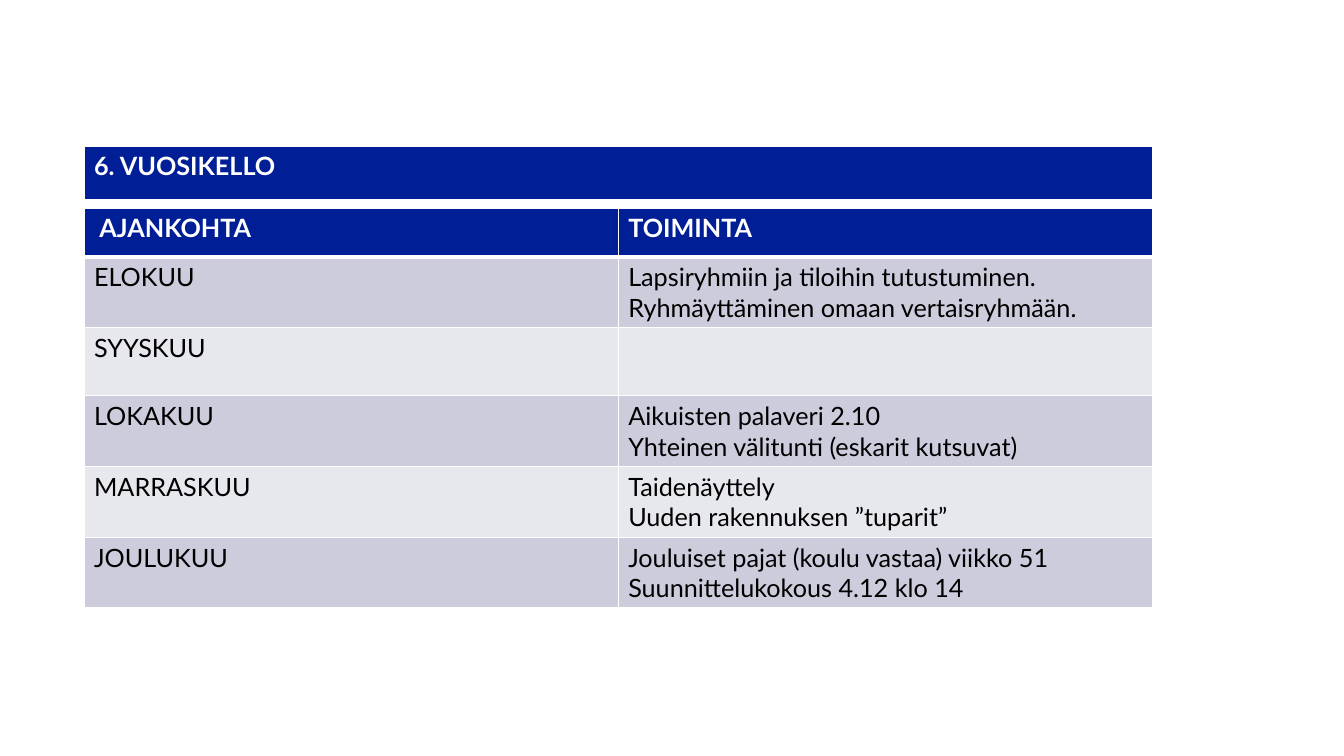
from lxml import etree
from pptx import Presentation
from pptx.dml.color import RGBColor
from pptx.oxml.ns import qn
from pptx.util import Inches, Pt

WIDTH, HEIGHT = 13.33, 7.5
NAVY, WHITE, BLACK = "001E96", "FFFFFF", "000000"
BANDS = ("CCCCDC", "E7E7EE")
THIN, THICK = 0.96, 3
LEFT, TABLE_WIDTH = 0.0625, 0.795
HEADINGS = [" AJANKOHTA", "TOIMINTA"]
MONTHS = [
    ("ELOKUU", "Lapsiryhmiin ja tiloihin tutustuminen.\nRyhmäyttäminen omaan vertaisryhmään."),
    ("SYYSKUU", ""),
    ("LOKAKUU", "Aikuisten palaveri 2.10\nYhteinen välitunti (eskarit kutsuvat)"),
    ("MARRASKUU", "Taidenäyttely\nUuden rakennuksen ”tuparit”"),
    ("JOULUKUU", "Jouluiset pajat (koulu vastaa) viikko 51\nSuunnittelukokous 4.12 klo 14"),
]


def color(value):
    """Turn a hex string into a colour."""
    return RGBColor.from_string(value)


class CalendarSlide:
    """Draw tables in one style, placed by shares of the slide's size."""

    font = "Lato"
    size = 18

    def __init__(self, deck):
        """Add an empty slide to the deck."""
        self.slide = deck.slides.add_slide(deck.slide_layouts[6])

    def border(self, cell, widths):
        """Draw white edges in the order left, right, top, bottom."""
        properties = cell._tc.get_or_add_tcPr()
        for place, (side, width) in enumerate(zip("LRTB", widths)):
            line = etree.Element(qn(f"a:ln{side}"), w=str(int(Pt(width))))
            fill = etree.SubElement(line, qn("a:solidFill"))
            etree.SubElement(fill, qn("a:srgbClr"), val=WHITE)
            properties.insert(place, line)

    def cell(self, cell, text, fill, heading, widths):
        """Fill one cell with text, background and edges."""
        cell.text_frame.text = text
        cell.fill.solid()
        cell.fill.fore_color.rgb = color(fill)
        for paragraph in cell.text_frame.paragraphs:
            for run in paragraph.runs:
                run.font.name = self.font
                run.font.size = Pt(self.size)
                run.font.bold = heading
                run.font.color.rgb = color(WHITE if heading else BLACK)
        self.border(cell, widths)

    def table(self, rows, left, top, width, heights):
        """Add a table with a navy heading row and banded rows below."""
        table = self.slide.shapes.add_table(
            len(rows), len(rows[0]), Inches(left * WIDTH), Inches(top * HEIGHT),
            Inches(width * WIDTH), Inches(sum(heights) * HEIGHT)).table
        for index, (texts, height) in enumerate(zip(rows, heights)):
            table.rows[index].height = Inches(height * HEIGHT)
            heading = index == 0
            fill = NAVY if heading else BANDS[(index - 1) % 2]
            widths = (THIN, THIN, THICK if index == 1 else THIN, THICK if heading else THIN)
            for column, text in enumerate(texts):
                self.cell(table.cell(index, column), text, fill, heading, widths)


def main():
    """Build the yearly calendar and save it."""
    deck = Presentation()
    deck.slide_width, deck.slide_height = Inches(WIDTH), Inches(HEIGHT)
    calendar = CalendarSlide(deck)
    month_heights = [0.09 if activity else 0.09 * 0.97 for _, activity in MONTHS]
    month_heights = [0.065] + [height + 0.003 for height in month_heights]
    calendar.table([HEADINGS, *MONTHS], LEFT, 0.275, TABLE_WIDTH, month_heights)
    calendar.table([["6. VUOSIKELLO"]], LEFT, 0.193, TABLE_WIDTH, [0.073])
    deck.save("out.pptx")


if __name__ == "__main__":
    main()
